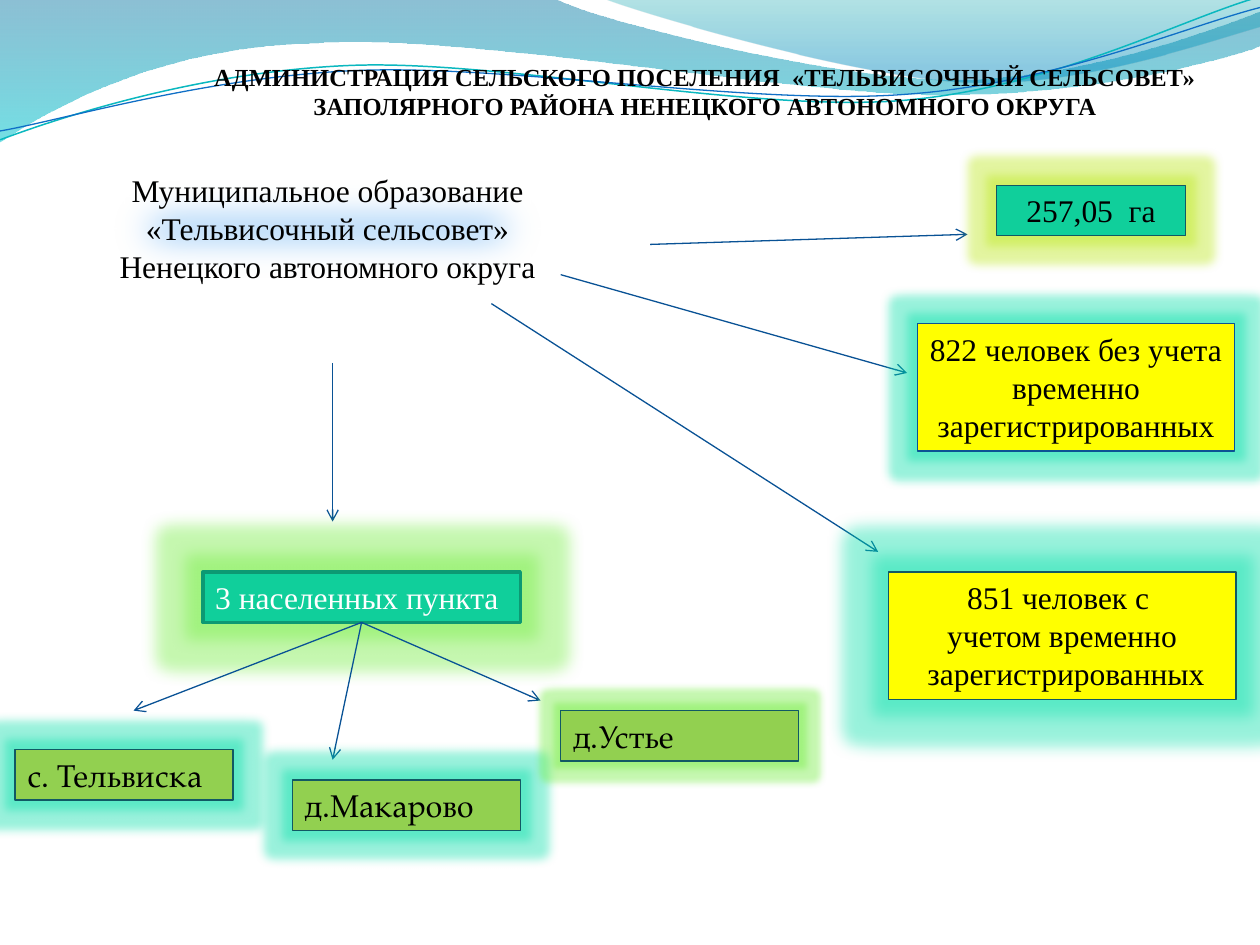
import math

from lxml import etree
from pptx import Presentation, util as u
from pptx.dml.color import RGBColor
from pptx.enum import shapes, text
from pptx.oxml.ns import qn

BLACK = RGBColor(0, 0, 0)
WHITE = RGBColor(255, 255, 255)
TEAL = RGBColor(0x10, 0xCF, 0x9B)
TEAL_DARK = RGBColor(0x0C, 0x99, 0x73)
YELLOW = RGBColor(0xFF, 0xFF, 0)
GREEN = RGBColor(0x92, 0xD0, 0x50)
SKY = RGBColor(0x91, 0xC6, 0xF7)
EDGE = RGBColor(0x11, 0x59, 0x64)
EDGE_BLUE = RGBColor(0x0B, 0x53, 0x94)
ARROW = RGBColor(0x09, 0x52, 0x95)
WAVE_CYAN = RGBColor(0x0A, 0xB8, 0xBF)
WAVE_BLUE = RGBColor(0x0F, 0x6F, 0xC6)
BAND_BLUE = RGBColor(0, 0x74, 0xA1)
BAND_CYAN = RGBColor(0, 0xC6, 0xCF)
CREST_CYAN = RGBColor(0, 0xA1, 0xA9)
CREST_BLUE = RGBColor(0, 0x8B, 0xBF)
GLOW_TEAL = RGBColor(0, 0xDF, 0xA8)
GLOW_GREEN = RGBColor(0x6E, 0xED, 0x39)
GLOW_LIME = RGBColor(0xBA, 0xE8, 0x11)

SERIF = "Times New Roman"
PAGELLA = "TeX Gyre Pagella"
WAVE_TILT = 2.7


def add_xml(parent, tag, **attrs):
    """Append a child element with the given attributes."""
    child = etree.SubElement(parent, qn(tag))
    for name, value in attrs.items():
        child.set(name, str(value))
    return child


def add_alpha(color, percent):
    """Give a colour element its opacity."""
    add_xml(color, "a:alpha", val=percent * 1000)


def add_outline(s, start, segments, close):
    """Add a freeform of lines (one point) and cubic curves (three points)."""
    ends = [tuple(map(u.Inches, seg[-2:])) for seg in segments]
    builder = s.shapes.build_freeform(*map(u.Inches, start))
    builder.add_line_segments(ends, close=close)
    sp = builder.convert_to_shape()
    sp.shadow.inherit = False
    for line, seg in zip(list(sp._element.spPr.iter(qn("a:lnTo"))), segments):
        if len(seg) == 6:
            curve = etree.Element(qn("a:cubicBezTo"))
            for x, y in zip(seg[::2], seg[1::2]):
                add_xml(curve, "a:pt", x=u.Inches(x) - sp.left, y=u.Inches(y) - sp.top)
            line.getparent().replace(line, curve)
    return sp


def add_band(s, start, segments, stops):
    """Add a closed wave with a translucent downward gradient."""
    sp = add_outline(s, start, segments, True)
    sp.line.fill.background()
    sp.fill.gradient()
    sp.fill.gradient_angle = 270
    for stop, (position, color, _) in zip(sp.fill.gradient_stops, stops):
        stop.position = position
        stop.color.rgb = color
    for clr, (_, _, opacity) in zip(sp._element.spPr.iter(qn("a:srgbClr")), stops):
        add_alpha(clr, opacity)


def turn(points, center):
    """Rotate a flat run of coordinates clockwise by the wave tilt."""
    (cx, cy), angle = center, math.radians(WAVE_TILT)
    cos, sin = math.cos(angle), math.sin(angle)
    flat = []
    for x, y in zip(points[::2], points[1::2]):
        flat += [cx + (x - cx) * cos - (y - cy) * sin,
                 cy + (x - cx) * sin + (y - cy) * cos]
    return flat


def add_wave(s, center, start, segments, color, width):
    """Add an open curved line as a level outline tilted back into place."""
    sp = add_outline(s, turn(start, center), [turn(seg, center) for seg in segments], False)
    sp.rotation = 360 - WAVE_TILT
    sp.fill.background()
    sp.line.color.rgb = color
    sp.line.width = u.Pt(width)


def write(sp, lines, size=18, font=SERIF, color=BLACK, align=text.PP_ALIGN.CENTER,
          anchor=text.MSO_ANCHOR.TOP, bold=False):
    """Fill a shape with one paragraph per line."""
    tf = sp.text_frame
    tf.word_wrap = True
    tf.auto_size = text.MSO_AUTO_SIZE.SHAPE_TO_FIT_TEXT
    tf.vertical_anchor = anchor
    for i, line in enumerate(lines):
        p = tf.paragraphs[0] if i == 0 else tf.add_paragraph()
        p.text = line
        p.alignment = align
        p.font.size = u.Pt(size)
        p.font.name = font
        p.font.bold = bold
        p.font.color.rgb = color


def add_title(s, box, line):
    """Add the bold heading."""
    sp = s.shapes.add_textbox(*map(u.Inches, box))
    write(sp, [line], size=14, anchor=text.MSO_ANCHOR.MIDDLE, bold=True)


def add_box(s, box, lines, fill, edge=EDGE, width=0.75, glow=None, soft=None, **style):
    """Add a filled rectangle with text and a glow or a soft edge."""
    sp = s.shapes.add_shape(shapes.MSO_SHAPE.RECTANGLE, *map(u.Inches, box))
    sp.shadow.inherit = False
    sp.fill.solid()
    sp.fill.fore_color.rgb = fill
    sp.line.color.rgb = edge
    sp.line.width = u.Pt(width)
    effects = sp._element.spPr.find(qn("a:effectLst"))
    if glow:
        color, radius = glow
        halo = add_xml(effects, "a:glow", rad=u.Pt(radius))
        add_alpha(add_xml(halo, "a:srgbClr", val=color), 40)
    if soft:
        add_xml(effects, "a:softEdge", rad=u.Pt(soft))
    write(sp, lines, **style)


def add_arrow(s, start, end):
    """Add a thin straight arrow."""
    cx = s.shapes.add_connector(shapes.MSO_CONNECTOR.STRAIGHT,
                                *map(u.Inches, start + end))
    cx.line.color.rgb = ARROW
    cx.line.width = u.Pt(0.75)
    add_xml(cx.line._get_or_add_ln(), "a:tailEnd", type="arrow")
    add_xml(cx._element.spPr, "a:effectLst")


def add_backdrop(s):
    """Add the waves along the top edge."""
    add_band(s, (0, 0), [
        (4.4, -0.01), (4.76, 0.17, 6.64, 0.63, 7.58, 0.63),
        (8.53, 0.63, 9.58, 0.26, 10, 0.09), (10.01, 0.36),
        (9.83, 0.44, 8.7, 0.76, 7.46, 0.75), (6.22, 0.75, 3.82, 0.28, 2.57, 0.34),
        (1.29, 0.36, 0.46, 0.83, -0.01, 1.13),
    ], [(0, BAND_BLUE, 45), (1, BAND_CYAN, 55)])
    add_band(s, (4.79, -0.01), [
        (5.09, 0.11, 6.82, 0.62, 7.69, 0.65), (8.56, 0.69, 9.61, 0.32, 10, 0.21),
        (10, 0),
    ], [(0, CREST_CYAN, 30), (0.8, CREST_BLUE, 45)])
    add_wave(s, (4.99, 0.58), (0, 1.11), [
        (0.48, 0.93, 1.58, 0.57, 2.77, 0.52), (3.95, 0.47, 5.93, 0.89, 7.13, 0.8),
        (8.33, 0.71, 9.38, 0.15, 9.98, -0.02)], WAVE_CYAN, 0.85)
    add_wave(s, (5, 0.59), (0, 1.04), [
        (0.47, 0.96, 1.64, 0.61, 2.83, 0.56), (4.03, 0.51, 5.97, 0.84, 7.17, 0.75),
        (8.36, 0.67, 9.41, 0.21, 10, 0.06)], WAVE_BLUE, 0.75)


def main():
    """Build the slide and save it."""
    prs = Presentation()
    prs.slide_width, prs.slide_height = u.Inches(10), u.Inches(7.5)
    s = prs.slides.add_slide(prs.slide_layouts[6])
    add_backdrop(s)
    add_title(s, (1.38, 0.44, 8.43, 0.57),
              "АДМИНИСТРАЦИЯ СЕЛЬСКОГО ПОСЕЛЕНИЯ  «ТЕЛЬВИСОЧНЫЙ СЕЛЬСОВЕТ» "
              "ЗАПОЛЯРНОГО РАЙОНА НЕНЕЦКОГО АВТОНОМНОГО ОКРУГА")
    add_box(s, (0.75, 1.31, 3.7, 1.01),
            ["Муниципальное образование", "«Тельвисочный сельсовет»",
             "Ненецкого автономного округа"], SKY, soft=25)
    for start, end in [((5.16, 1.94), (7.68, 1.86)), ((4.45, 2.18), (7.2, 2.96)),
                       ((2.64, 2.88), (2.64, 4.14))]:
        add_arrow(s, start, end)

    left = text.PP_ALIGN.LEFT
    add_box(s, (1.61, 4.54, 2.52, 0.4), ["3 населенных пункта"], TEAL, TEAL_DARK, 2,
            glow=(GLOW_GREEN, 18), color=WHITE, align=left)
    for end in [(1.06, 5.64), (2.64, 6.03), (4.29, 5.56)]:
        add_arrow(s, (2.87, 4.94), end)
    for x, y, w, name, glow in [(0.12, 5.95, 1.73, "с. Тельвиска", (GLOW_TEAL, 11)),
                                (2.32, 6.19, 1.81, "д.Макарово", (GLOW_TEAL, 11)),
                                (4.45, 5.64, 1.89, "д.Устье", (GLOW_GREEN, 8))]:
        add_box(s, (x, y, w, 0.4), [name], GREEN, glow=glow, font=PAGELLA, align=left)

    add_box(s, (7.91, 1.47, 1.5, 0.4), ["257,05  га"], TEAL, glow=(GLOW_LIME, 11))
    add_box(s, (7.28, 2.57, 2.52, 1.01),
            ["822 человек без учета временно зарегистрированных"],
            YELLOW, EDGE_BLUE, glow=(GLOW_TEAL, 11))
    add_arrow(s, (3.9, 2.41), (6.97, 4.38))
    add_box(s, (7.05, 4.54, 2.76, 1.01),
            ["851 человек с ", "учетом временно", " зарегистрированных"],
            YELLOW, glow=(GLOW_TEAL, 18))
    prs.save("out.pptx")


if __name__ == "__main__":
    main()
